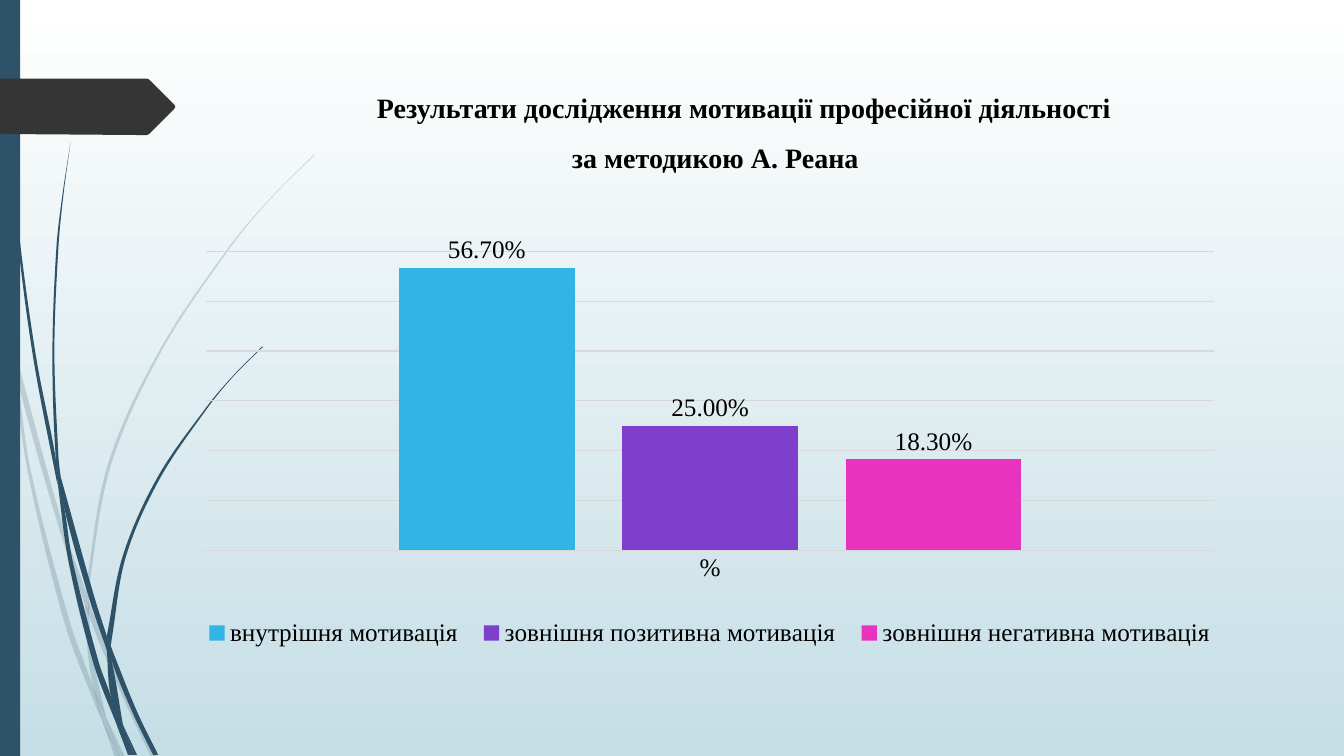
import math

import pptx
import pptx.chart.data
import pptx.dml.color
import pptx.enum.chart
import pptx.enum.shapes
import pptx.enum.text
import pptx.oxml
import pptx.oxml.ns
import pptx.util

Cm = pptx.util.Cm
Pt = pptx.util.Pt
RGB = pptx.dml.color.RGBColor
tagged = pptx.oxml.ns.qn
spaces = pptx.oxml.ns.nsdecls

NAVY = RGB(0x2E, 0x53, 0x69)
DARK = RGB(0x35, 0x35, 0x35)
BLACK = RGB(0, 0, 0)
GRID = RGB(0xD9, 0xD9, 0xD9)
WHITE = RGB(0xFF, 0xFF, 0xFF)
MIST = RGB(0xC5, 0xDE, 0xE5)
FACE = "Times New Roman"
INCH = Cm(2.54)

TITLE = "Результати дослідження мотивації професійної діяльності\vза методикою А.\u00a0Реана "
GROUP = "%"
BARS = [
    ("внутрішня мотивація", 0.567, RGB(0x31, 0xB4, 0xE6)),
    ("зовнішня позитивна мотивація", 0.25, RGB(0x7E, 0x40, 0xCC)),
    ("зовнішня негативна мотивація", 0.183, RGB(0xE8, 0x33, 0xBF)),
]
PLOT = {"x": 0.024, "y": 0.076, "w": 0.953, "h": 0.634}
KEY = {"x": 0.01, "y": 0.83, "w": 0.98, "h": 0.11}
TAG = [(0, 0.78), (1.46, 0.78), (1.48, 0.79), (1.73, 1.04), (1.74, 1.06),
       (1.73, 1.08), (1.48, 1.33), (1.46, 1.34), (1.36, 1.34), (0, 1.33)]

PALE = [
    ([(0, 2.99), (0.1, 3.44), (0.11, 3.5)], [(0, 2.82), (0.09, 3.22), (0.11, 3.5)]),
    ([(0.14, 3.45), (0.17, 3.76), (0.58, 5.22), (0.84, 5.99)],
     [(0.14, 3.45), (0.62, 5.2), (0.85, 5.86)]),
    ([(0.88, 5.96), (0.88, 6.1), (1.23, 6.94), (1.5, 7.51)],
     [(0.88, 5.96), (0.92, 6.07), (1.27, 6.92), (1.55, 7.51)]),
    ([(1.05, 7.11), (1.19, 7.51)], [(1.05, 7.11), (1.24, 7.51)]),
    ([(0.11, 3.5), (0.28, 4.7), (0.65, 6.21), (0.92, 6.93), (1.01, 7.14)],
     [(0.11, 3.5), (0.17, 3.76), (0.31, 4.69), (0.7, 6.19), (0.93, 6.83), (1.01, 7.14)]),
    ([(0.84, 5.99), (0.87, 6.46), (0.93, 6.83), (1.05, 7.11)],
     [(0.84, 5.99), (0.88, 6.08), (0.91, 6.46), (1.05, 7.11)]),
    ([(3.12, 1.53), (2.68, 1.97), (2.28, 2.44), (1.58, 3.48), (1.07, 4.61), (0.85, 5.84)],
     [(3.12, 1.54), (2.68, 1.98), (2.29, 2.45), (1.6, 3.49), (1.1, 4.62), (0.88, 5.84),
      (0.88, 5.96)]),
    ([(1.01, 7.14), (1.14, 7.51)], [(1.01, 7.14), (1.19, 7.51)]),
    ([(0.85, 5.86), (0.84, 5.99)], [(0.85, 5.86), (0.88, 5.96), (0.88, 6.1)]),
    ([(0.93, 6.83), (1.01, 7.14), (1.19, 7.51)], [(0.93, 6.83), (1.05, 7.11), (1.19, 7.51)]),
]
DEEP = [
    ([(0.03, 0), (0.07, 1.1), (0.17, 2.33), (0.33, 3.55), (0.57, 4.81)],
     [(0.04, 0), (0.08, 1.09), (0.19, 2.32), (0.36, 3.55), (0.55, 4.53), (0.57, 4.81)]),
    ([(0.6, 4.72), (0.64, 5.05), (0.88, 5.92), (1.06, 6.45)],
     [(0.6, 4.72), (0.93, 5.9), (1.06, 6.31)]),
    ([(1.1, 6.41), (1.11, 6.56), (1.32, 7.08), (1.52, 7.49)],
     [(1.1, 6.41), (1.13, 6.49), (1.36, 7.06), (1.57, 7.49)]),
    ([(0.57, 4.77), (0.68, 5.57), (0.93, 6.59), (1.17, 7.22)],
     [(0.57, 4.77), (0.64, 5.05), (0.72, 5.56), (0.98, 6.57), (1.1, 6.91), (1.17, 7.22)]),
    ([(0.7, 1.41), (0.62, 1.93), (0.56, 2.45), (0.52, 3.49), (0.55, 4.49), (0.6, 4.72)],
     [(0.7, 1.41), (0.63, 1.93), (0.58, 2.45), (0.54, 3.49), (0.58, 4.53), (0.6, 4.72)]),
    ([(1.22, 7.19), (1.33, 7.49)], [(1.22, 7.19), (1.36, 7.49)]),
    ([(0.55, 4.49), (0.57, 4.77), (0.64, 5.05)], [(0.55, 4.49), (0.6, 4.72), (0.64, 5.05)]),
    ([(2.6, 3.44), (2.31, 3.73), (2.04, 4.05), (1.56, 4.74), (1.22, 5.51), (1.06, 6.31)],
     [(2.61, 3.44), (2.31, 3.74), (2.05, 4.06), (1.58, 4.76), (1.25, 5.52), (1.11, 6.33),
      (1.1, 6.41)]),
    ([(1.17, 7.22), (1.27, 7.49)], [(1.17, 7.22), (1.31, 7.49)]),
    ([(1.06, 6.45), (1.1, 6.91), (1.22, 7.19)], [(1.06, 6.45), (1.11, 6.56), (1.22, 7.19)]),
    ([(1.06, 6.31), (1.06, 6.45), (1.11, 6.56)], [(1.06, 6.31), (1.1, 6.41), (1.11, 6.56)]),
    ([(1.1, 6.91), (1.17, 7.22), (1.3, 7.49)], [(1.1, 6.91), (1.22, 7.19), (1.33, 7.49)]),
]


def shift(base, start, end, size):
    span = math.dist(start, end) or 1
    return tuple(p + (r - q) * size / span for p, q, r in zip(base, start, end))


def bend(edge):
    ends = [edge[0]] + edge + [edge[-1]]
    dots = []
    for a, b, c, d in zip(ends, ends[1:], ends[2:], ends[3:]):
        third = math.dist(b, c) / 3
        dots += [shift(b, a, c, third), shift(c, d, b, third), c]
    return dots


def paint(shape, tint):
    shape.shadow.inherit = False
    shape.fill.solid()
    shape.fill.fore_color.rgb = tint
    shape.line.fill.background()


def outline(slide, dots, tint):
    spots = [(round(x * INCH), round(y * INCH)) for x, y in dots]
    pen = slide.shapes.build_freeform(*spots[0])
    pen.add_line_segments(spots[1:], close=True)
    shape = pen.convert_to_shape()
    paint(shape, tint)
    return shape


def blade(slide, left, right):
    cap = [] if left[-1] == right[-1] else bend([left[-1], right[-1]])
    shape = outline(slide, [left[0]] + bend(left) + cap + bend(right[::-1]), NAVY)
    lines = list(shape._element.iter(tagged("a:lnTo")))
    count = len(bend(left) + cap + bend(right))
    for first in range(0, count, 3):
        curve = pptx.oxml.parse_xml(f'<a:cubicBezTo {spaces("a")}/>')
        lines[first].addprevious(curve)
        for line in lines[first:first + 3]:
            curve.append(line[0])
            line.getparent().remove(line)
    return shape


def decor(slide):
    fill = slide.background.fill
    fill.gradient()
    fill.gradient_angle = 270
    for stop, tint in zip(fill.gradient_stops, (WHITE, MIST)):
        stop.color.rgb = tint
    for edges in PALE:
        hue = blade(slide, *edges).fill._xPr.find(".//" + tagged("a:srgbClr"))
        hue.append(pptx.oxml.parse_xml(f'<a:alpha {spaces("a")} val="20000"/>'))
    for edges in DEEP:
        blade(slide, *edges)
    kind = pptx.enum.shapes.MSO_SHAPE.RECTANGLE
    paint(slide.shapes.add_shape(kind, 0, 0, Cm(0.51), Cm(19.05)), NAVY)
    outline(slide, TAG, DARK)


def style(font, size=18):
    font.name, font.size, font.color.rgb = FACE, Pt(size), BLACK


def rule(line):
    line.color.rgb, line.width = GRID, Pt(0.75)


def head(slide):
    title = slide.shapes.title
    title.left, title.top, title.width, title.height = Cm(4.27), Cm(1.73), Cm(27.69), Cm(2.36)
    frame = title.text_frame
    frame.text = TITLE
    frame.word_wrap = True
    frame.auto_size = pptx.enum.text.MSO_AUTO_SIZE.NONE
    frame.vertical_anchor = pptx.enum.text.MSO_ANCHOR.TOP
    para = frame.paragraphs[0]
    para.alignment = pptx.enum.text.PP_ALIGN.CENTER
    para.line_spacing, para.space_before, para.space_after = 1.5, Pt(0), Pt(8)
    style(para.font, 20)
    para.font.bold = True
    props = para._p.get_or_add_pPr()
    props.set("marL", "0")
    props.set("indent", str(Cm(1.27)))


def place(part, box, target=""):
    for old in part.findall(tagged("c:layout")):
        part.remove(old)
    modes = "".join(f'<c:{key}Mode val="edge"/>' for key in "xy")
    sizes = "".join(f'<c:{key} val="{size}"/>' for key, size in box.items())
    layout = pptx.oxml.parse_xml(
        f'<c:layout {spaces("c")}><c:manualLayout>{target}{modes}{sizes}</c:manualLayout></c:layout>')
    part.insert(1 if part.tag == tagged("c:legend") else 0, layout)


def graph(slide):
    kinds = pptx.enum.chart
    data = pptx.chart.data.CategoryChartData(number_format="0.00%")
    data.categories = [GROUP]
    for name, share, tint in BARS:
        data.add_series(name, [share])
    chart = slide.shapes.add_chart(kinds.XL_CHART_TYPE.COLUMN_CLUSTERED, Cm(4.56), Cm(5.43),
                                   Cm(26.65), Cm(11.89), data).chart
    style(chart.font)
    chart.has_title = False
    chart.has_legend = True
    chart.legend.position = kinds.XL_LEGEND_POSITION.BOTTOM
    chart.legend.include_in_layout = False
    style(chart.legend.font)
    base, scale = chart.category_axis, chart.value_axis
    base.major_tick_mark = kinds.XL_TICK_MARK.NONE
    style(base.tick_labels.font)
    rule(base.format.line)
    scale.visible = False
    scale.minimum_scale, scale.maximum_scale, scale.major_unit = 0, 0.6, 0.1
    rule(scale.major_gridlines.format.line)
    plot = chart.plots[0]
    plot.gap_width, plot.overlap, plot.vary_by_categories = 219, -27, False
    for bar, (name, share, tint) in zip(plot.series, BARS):
        bar.format.fill.solid()
        bar.format.fill.fore_color.rgb = tint
        tags = bar.data_labels
        tags.show_value = True
        tags.position = kinds.XL_LABEL_POSITION.OUTSIDE_END
        tags.number_format, tags.number_format_is_linked = "0.00%", False
        style(tags.font)
    place(chart._chartSpace.chart.plotArea, PLOT, '<c:layoutTarget val="inner"/>')
    place(chart.legend._element, KEY)


def main():
    deck = pptx.Presentation()
    deck.slide_width, deck.slide_height = Cm(33.87), Cm(19.05)
    slide = deck.slides.add_slide(deck.slide_layouts[5])
    decor(slide)
    head(slide)
    graph(slide)
    deck.save("out.pptx")


if __name__ == "__main__":
    main()
